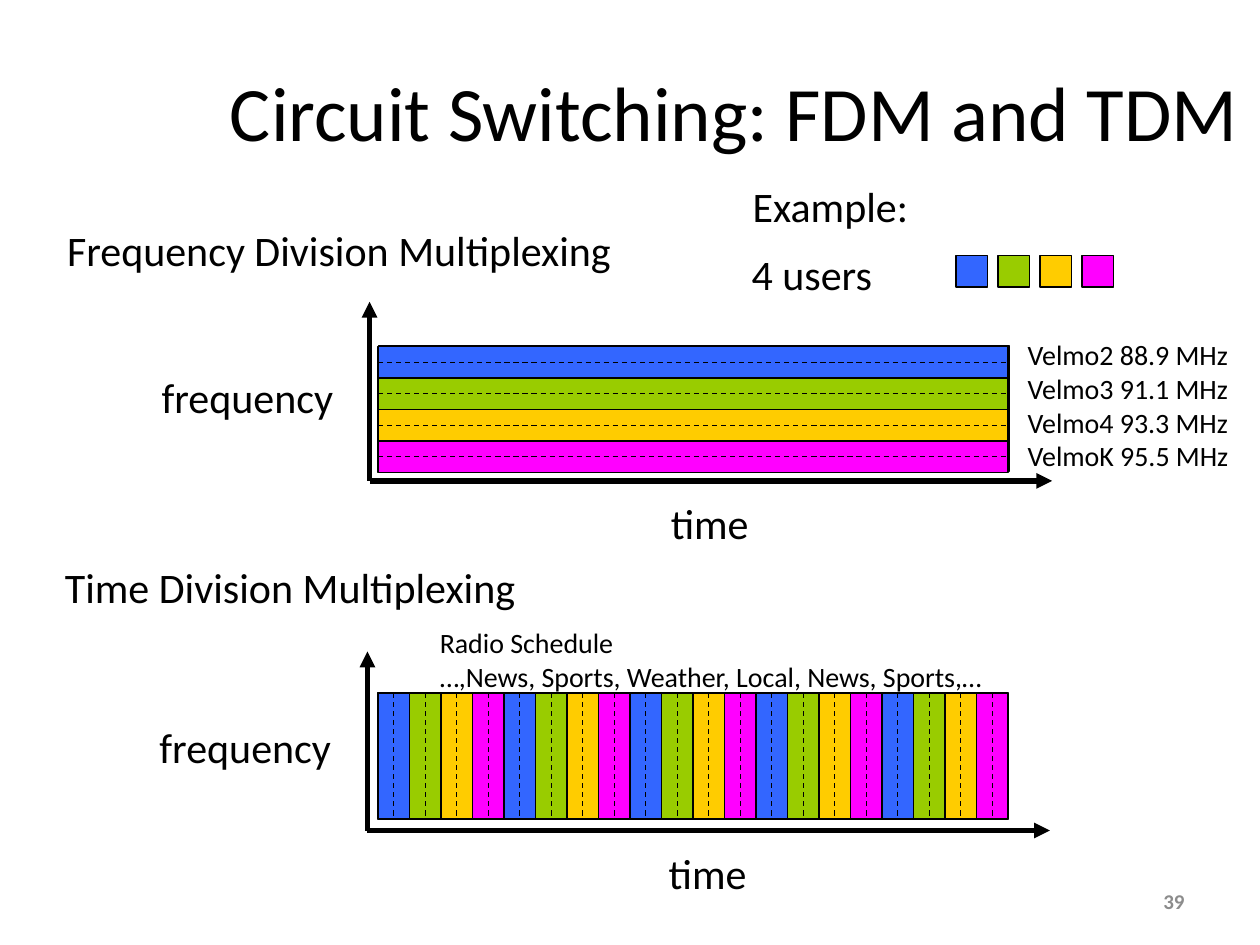
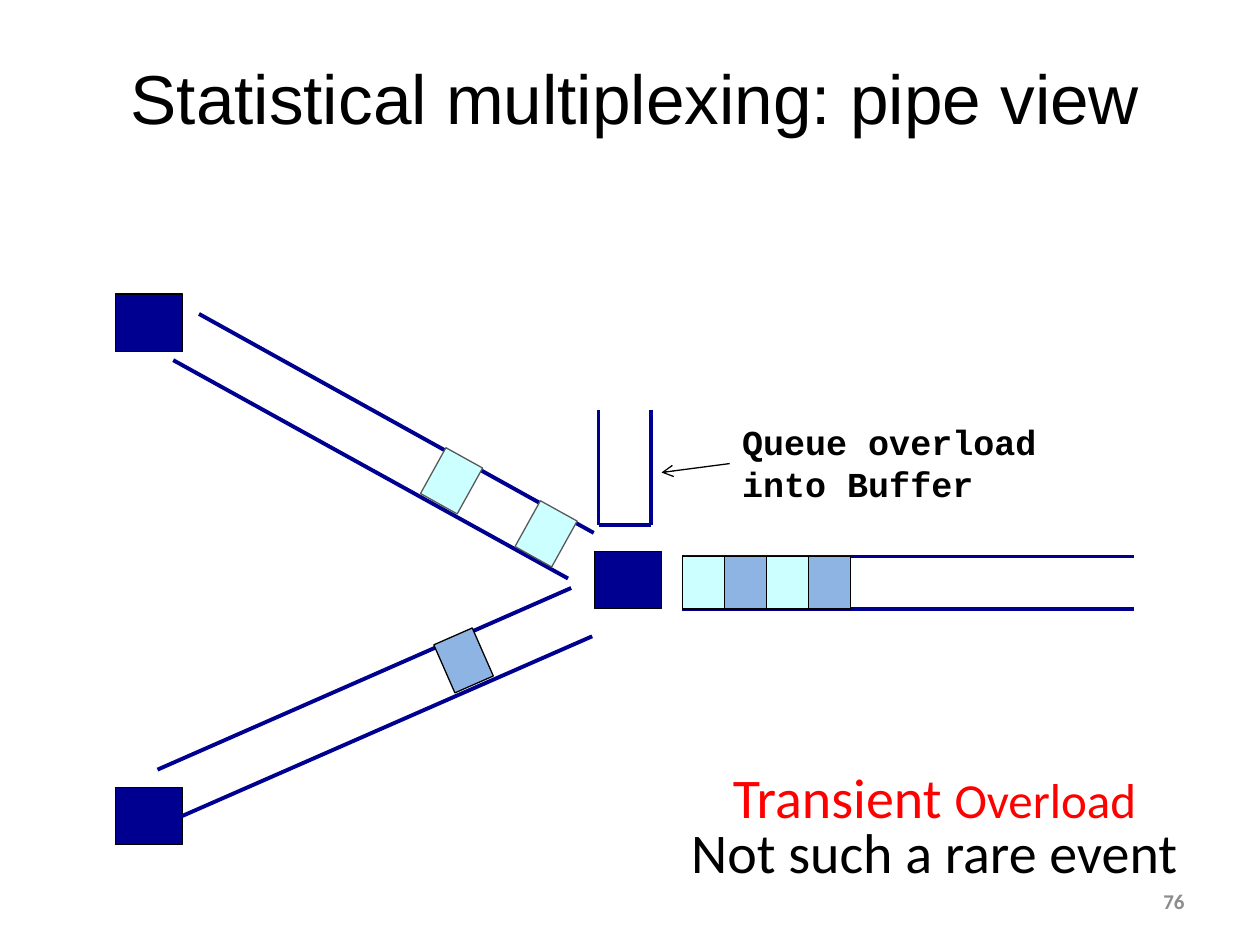
from pptx import Presentation
from pptx.dml.color import RGBColor
from pptx.enum.dml import MSO_LINE
from pptx.enum.shapes import MSO_CONNECTOR, MSO_SHAPE
from pptx.enum.text import MSO_ANCHOR, PP_ALIGN
from pptx.oxml.ns import qn
from pptx.util import Inches, Pt
from lxml.etree import SubElement


class Theme:
    black, navy, red, grey = "000000", "000090", "FF0000", "8C8C8C"
    users = ["3366FF", "99CC00", "FFCC00", "FF00FF"]
    plot, upper, lower, edge = "4F81BD", "CCFFFF", "8EB4E3", "595959"
    thin, pipe, axis = 0.75, 2.25, 3
    # style: colour, then font attributes
    styles = {
        "title": (black, dict(name="Calibri", size=Pt(44))),
        "arial title": (black, dict(name="Arial", size=Pt(39.6))),
        "label": (black, dict(name="Calibri", size=Pt(24))),
        "small": (black, dict(name="Calibri", size=Pt(16))),
        "code": (black, dict(name="Courier New", size=Pt(20), bold=True)),
        "alert": (red, dict(name="Calibri", size=Pt(32))),
        "alert small": (red, dict(name="Calibri", size=Pt(28))),
        "remark": (black, dict(name="Calibri", size=Pt(32))),
        "number": (grey, dict(name="Calibri", size=Pt(12), bold=True)),
    }


prs = Presentation()
prs.slide_width, prs.slide_height = Inches(10), Inches(7.5)
U = prs.slide_width / 120  # square grid: 120 columns by 90 rows


def add_rect(s, x, y, w, h, fill, line=Theme.black, rotation=0):
    sp = s.shapes.add_shape(MSO_SHAPE.RECTANGLE, *(round(v * U) for v in (x, y, w, h)))
    sp.shadow.inherit = False
    sp.fill.solid()
    sp.fill.fore_color.rgb = RGBColor.from_string(fill)
    sp.line.color.rgb = RGBColor.from_string(line)
    sp.line.width = Pt(Theme.thin)
    sp.rotation = rotation
    return sp


def add_line(s, x1, y1, x2, y2, color=Theme.black, width=Theme.thin, head=None):
    c = s.shapes.add_connector(MSO_CONNECTOR.STRAIGHT, *(round(v * U) for v in (x1, y1, x2, y2)))
    c.line.color.rgb = RGBColor.from_string(color)
    c.line.width = Pt(width)
    if head:
        SubElement(c._element.spPr.get_or_add_ln(), qn("a:tailEnd"), type=head)
    SubElement(c._element.spPr, qn("a:effectLst"))
    return c


fdm, stat = (prs.slides.add_slide(prs.slide_layouts[6]) for _ in range(2))
LEFT, CENTER, RIGHT = PP_ALIGN.LEFT, PP_ALIGN.CENTER, PP_ALIGN.RIGHT

# Texts: slide, area, alignment, wrap, paragraphs of (text, style) runs
texts = [
    (fdm, (14.4, 3, 111.1, 15), CENTER, True, [[("Circuit Switching: FDM and TDM", "title")]]),
    (stat, (6, 1.5, 109, 15.4), CENTER, True,
     [[("Statistical multiplexing: pipe view", "arial title")]]),
]
for s, number in ((fdm, "39"), (stat, "76")):
    texts.append((s, (86, 83.4, 28, 4.8), RIGHT, True, [[(number, "number")]]))

# Slide 1: the same plot area split by frequency, then by time
WIDTH, HEIGHT, SLOT = 60, 12, 3
panels = [
    # heading, its area, axis origin, plot, bands, step, band size, line run, joined sides
    ("Frequency Division Multiplexing", (5.2, 20.8, 54.8, 6.1), (35.2, 45.8), (36.1, 32.9),
     4, (0, SLOT), (WIDTH, SLOT), (WIDTH, 0), (1, 3)),
    ("Time Division Multiplexing", (5, 52.9, 45.8, 6.1), (35, 79.1), (36, 66),
     20, (SLOT, 0), (SLOT, HEIGHT), (0, HEIGHT), (0, 2)),
]
for (heading, area, (ox, oy), (px, py), count, (dx, dy), size, (lx, ly), sides) in panels:
    texts += [
        (fdm, area, LEFT, False, [[(heading, "label")]]),
        (fdm, (ox - 21, oy - 11, 19.1, 6.1), LEFT, False, [[("frequency", "label")]]),
        (fdm, (ox + 27.5, oy + 1, 10, 6), LEFT, False, [[("time", "label")]]),
    ]
    add_line(fdm, ox, oy, ox, oy - 17.05, width=Theme.axis, head="triangle")
    add_line(fdm, ox, oy, ox + 65, oy, width=Theme.axis, head="triangle")
    add_rect(fdm, px, py, WIDTH, HEIGHT, Theme.plot)
    x, y = 36, round(py)
    bands = [add_rect(fdm, x + i * dx, y + i * dy, *size, Theme.users[i % 4])
             for i in range(count)]
    for i in range(1, count):
        bx, by = x + i * dx, y + i * dy
        add_line(fdm, bx, by, bx + lx, by + ly)
    for band in bands:
        c = add_line(fdm, x, y, x + lx, y + ly)
        c.line.dash_style = MSO_LINE.DASH
        c.begin_connect(band, sides[0])
        c.end_connect(band, sides[1])

for i, color in enumerate(Theme.users):
    add_rect(fdm, 91.05 + 4 * i, 24.35, SLOT, SLOT, color)

stations = ["Velmo2 88.9 MHz", "Velmo3 91.1 MHz", "Velmo4 93.3 MHz", "VelmoK 95.5 MHz"]
schedule = ["Radio Schedule", "…,News, Sports, Weather, Local, News, Sports,…"]
texts += [
    (fdm, (70.5, 16.6, 17.4, 6.1), LEFT, False, [[("Example:", "label")]]),
    (fdm, (70.4, 23.1, 14, 6.1), LEFT, False, [[("4 users", "label")]]),
    (fdm, (96.7, 31.6, 23.3, 14.2), LEFT, True, [[(t, "small")] for t in stations]),
    (fdm, (40.7, 59, 72.6, 7.7), LEFT, True, [[(t, "small")] for t in schedule]),
]

# Slide 2: two senders feed one switch, with a buffer above it
for x, y in ((56.6, 52.5), (11, 28), (11, 75)):
    add_rect(stat, x, y, 6.4, 5.45, Theme.navy)

pipes = [
    (18.95, 29.9, 56.55, 50.75), (16.5, 34.3, 54.1, 55.1),  # upper sender
    (15, 73.3, 54.4, 56), (17.05, 77.85, 56.4, 60.6),       # lower sender
    (57, 39, 57, 50), (62, 39, 62, 50), (57, 50, 62, 50),   # buffer
    (65, 53, 108, 53), (65, 58, 108, 58),                   # output
]
for ends in pipes:
    add_line(stat, *ends, Theme.navy, Theme.pipe)

PACKET = 4, 5
for x, y in ((50, 48.35), (41, 43.3)):
    add_rect(stat, x, y, *PACKET, Theme.upper, Theme.edge, 29)
add_rect(stat, 42.15, 60.4, *PACKET, Theme.lower, rotation=336.3)
for i in range(4):
    add_rect(stat, 65 + 4 * i, 53, *PACKET, (Theme.upper, Theme.lower)[i % 2])

add_line(stat, 69.5, 44.15, 63, 45, head="arrow")
texts += [
    (stat, (69.5, 39.5, 30.7, 9.25), LEFT, False,
     [[("Queue overload", "code")], [("into Buffer", "code")]]),
    (stat, (61, 72, 56, 7.7), CENTER, True,
     [[("Transient ", "alert"), ("Overload", "alert small")]]),
    (stat, (61, 77.3, 56, 7.7), CENTER, True, [[("Not such a rare event", "remark")]]),
]

for s, area, align, wrap, paragraphs in texts:
    tf = s.shapes.add_textbox(*(round(v * U) for v in area)).text_frame
    tf.word_wrap = wrap
    centred = paragraphs[0][0][1] in ("title", "arial title", "number")
    tf.vertical_anchor = MSO_ANCHOR.MIDDLE if centred else MSO_ANCHOR.TOP
    for i, runs in enumerate(paragraphs):
        p = tf.add_paragraph() if i else tf.paragraphs[0]
        p.alignment = align
        for text, style in runs:
            r = p.add_run()
            r.text = text
            color, font = Theme.styles[style]
            r.font.color.rgb = RGBColor.from_string(color)
            for key, value in font.items():
                setattr(r.font, key, value)

prs.save("out.pptx")
